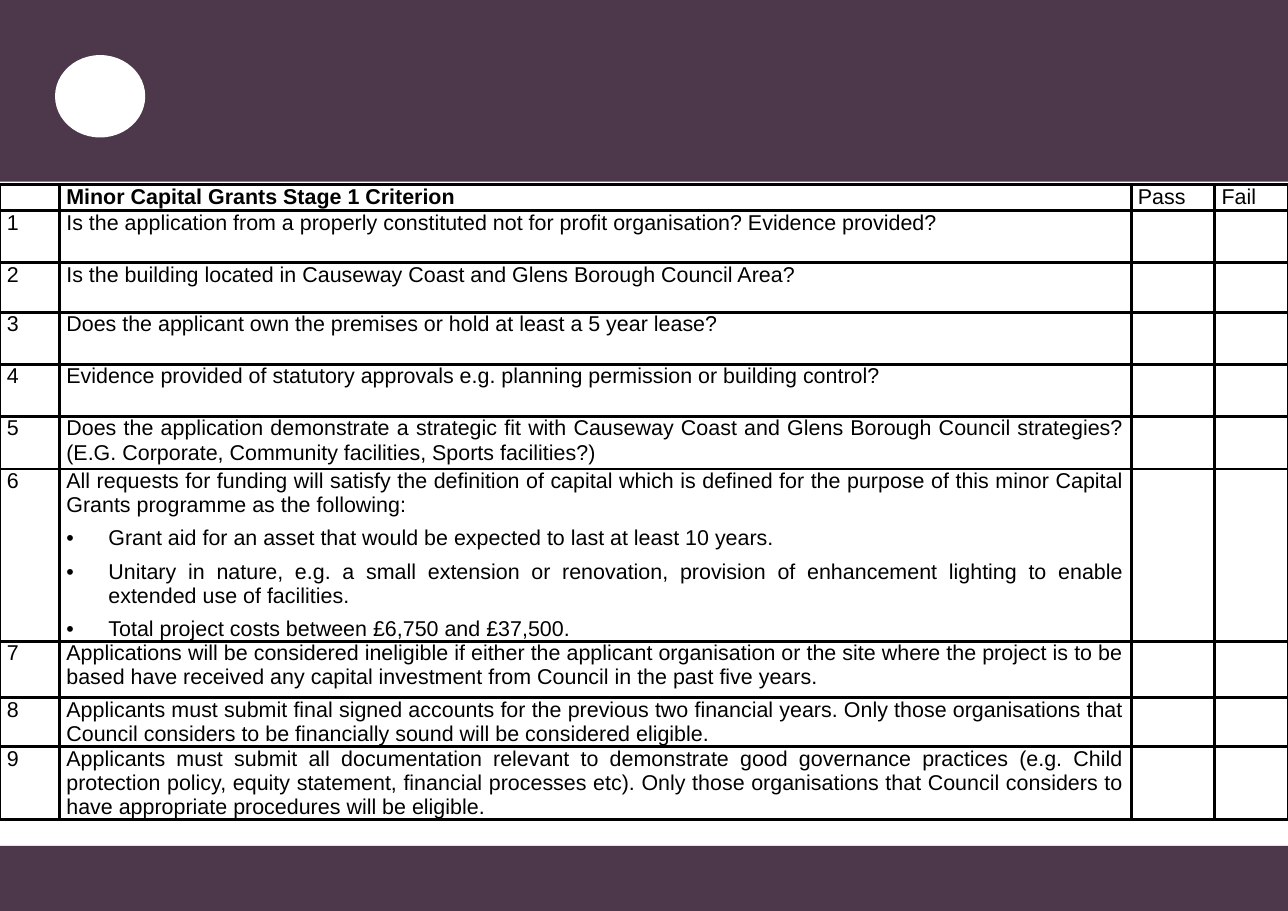
from dataclasses import dataclass

from lxml.etree import SubElement
from pptx import Presentation
from pptx.dml.color import RGBColor
from pptx.enum.shapes import MSO_SHAPE
from pptx.enum.text import PP_ALIGN
from pptx.oxml.ns import qn
from pptx.util import Cm, Pt


@dataclass(frozen=True)
class Theme:
    plum: str = "4C374B"
    white: str = "FFFFFF"
    black: str = "000000"
    font: str = "Arial"
    text_size: int = 14
    space_after: int = 6
    border: float = 2.25


THEME = Theme()
PAGE_WIDTH, PAGE_HEIGHT = 29.7, 21
HEADER_HEIGHT, FOOTER_HEIGHT = 4.19, 1.5
TABLE_TOP = 4.26
BULLET_INDENT = 0.97
CELL_MARGIN = 0.16

COLUMN_WIDTHS = (1.37, 24.71, 1.93, 1.69)
ROW_HEIGHTS = (0.56, 1.2, 1.14, 1.19, 1.21, 1.21, 3.96, 1.31, 1.13, 1.66)
HEADINGS = ("", "Minor Capital Grants Stage 1 Criterion", "Pass", "Fail")
CRITERIA = (
    "Is the application from a properly constituted not for profit organisation? Evidence provided?",
    "Is the building located in Causeway Coast and Glens Borough Council Area?",
    "Does the applicant own the premises or hold at least a 5 year lease?",
    "Evidence provided of statutory approvals e.g. planning permission or building control?",
    "Does the application demonstrate a strategic fit with Causeway Coast and Glens Borough "
    "Council strategies? (E.G. Corporate, Community facilities, Sports facilities?)",
    "All requests for funding will satisfy the definition of capital which is defined for the "
    "purpose of this minor Capital Grants programme as the following:",
    "Applications will be considered ineligible if either the applicant organisation or the site "
    "where the project is to be based have received any capital investment from Council in the "
    "past five years.",
    "Applicants must submit final signed accounts for the previous two financial years. Only those "
    "organisations that Council considers to be financially sound will be considered eligible.",
    "Applicants must submit all documentation relevant to demonstrate good governance practices "
    "(e.g. Child protection policy, equity statement, financial processes etc). Only those "
    "organisations that Council considers to have appropriate procedures will be eligible.",
)
CAPITAL_ROW = 6
CAPITAL_DEFINITION = (
    "Grant aid for an asset that would be expected to last at least 10 years.",
    "Unitary in nature, e.g. a small extension or renovation, provision of enhancement lighting "
    "to enable extended use of facilities.",
    "Total project costs between £6,750 and £37,500.",
)


def add_plain_shape(page, kind, left, top, width, height, colour):
    shape = page.shapes.add_shape(kind, Cm(left), Cm(top), Cm(width), Cm(height))
    shape.shadow.inherit = False
    shape.fill.solid()
    shape.fill.fore_color.rgb = RGBColor.from_string(colour)
    shape.line.fill.background()


def add_bullet(para):
    properties = para._p.get_or_add_pPr()
    properties.set("marL", str(Cm(BULLET_INDENT)))
    properties.set("indent", str(-Cm(BULLET_INDENT)))
    SubElement(properties, qn("a:buFont"), typeface=THEME.font)
    SubElement(properties, qn("a:buChar"), char="•")


def write_para(para, text, bold=False):
    para.alignment = PP_ALIGN.JUSTIFY
    para.space_after = Pt(THEME.space_after)
    if not text:
        # The end mark keeps an empty cell from growing its row.
        SubElement(para._p, qn("a:endParaRPr"), sz=str(THEME.text_size * 100))
        return
    span = para.add_run()
    span.text = text
    span.font.name = THEME.font
    span.font.size = Pt(THEME.text_size)
    span.font.bold = bold
    span.font.color.rgb = RGBColor.from_string(THEME.black)


def format_cell(cell):
    cell.margin_left = cell.margin_right = Cm(CELL_MARGIN)
    cell.margin_top = cell.margin_bottom = 0
    properties = cell._tc.get_or_add_tcPr()
    for side in ("lnL", "lnR", "lnT", "lnB"):
        line = SubElement(properties, qn(f"a:{side}"), w=str(Pt(THEME.border)))
        fill = SubElement(line, qn("a:solidFill"))
        SubElement(fill, qn("a:srgbClr"), val=THEME.black)
    cell.fill.background()


def add_criteria_table(page):
    rows = [HEADINGS]
    rows += [(str(number), text, "", "") for number, text in enumerate(CRITERIA, 1)]
    frame = page.shapes.add_table(
        len(rows), len(HEADINGS), 0, Cm(TABLE_TOP), Cm(sum(COLUMN_WIDTHS)), Cm(sum(ROW_HEIGHTS))
    )
    table = frame.table
    table.first_row = table.horz_banding = False
    for column, width in zip(table.columns, COLUMN_WIDTHS):
        column.width = Cm(width)
    for row, height in zip(table.rows, ROW_HEIGHTS):
        row.height = Cm(height)

    for row_index, texts in enumerate(rows):
        for column_index, text in enumerate(texts):
            cell = table.cell(row_index, column_index)
            format_cell(cell)
            is_heading = (row_index, column_index) == (0, 1)
            write_para(cell.text_frame.paragraphs[0], text, bold=is_heading)

    for text in CAPITAL_DEFINITION:
        para = table.cell(CAPITAL_ROW, 1).text_frame.add_paragraph()
        add_bullet(para)
        write_para(para, text)


def main():
    deck = Presentation()
    deck.slide_width, deck.slide_height = Cm(PAGE_WIDTH), Cm(PAGE_HEIGHT)
    page = deck.slides.add_slide(deck.slide_layouts.get_by_name("Blank"))
    add_plain_shape(page, MSO_SHAPE.RECTANGLE, 0, 0, PAGE_WIDTH, HEADER_HEIGHT, THEME.plum)
    add_plain_shape(page, MSO_SHAPE.OVAL, 1.27, 1.27, 2.08, 1.9, THEME.white)
    add_plain_shape(page, MSO_SHAPE.RECTANGLE, 0, PAGE_HEIGHT - FOOTER_HEIGHT,
                    PAGE_WIDTH, FOOTER_HEIGHT, THEME.plum)
    add_criteria_table(page)
    deck.save("out.pptx")


if __name__ == "__main__":
    main()
